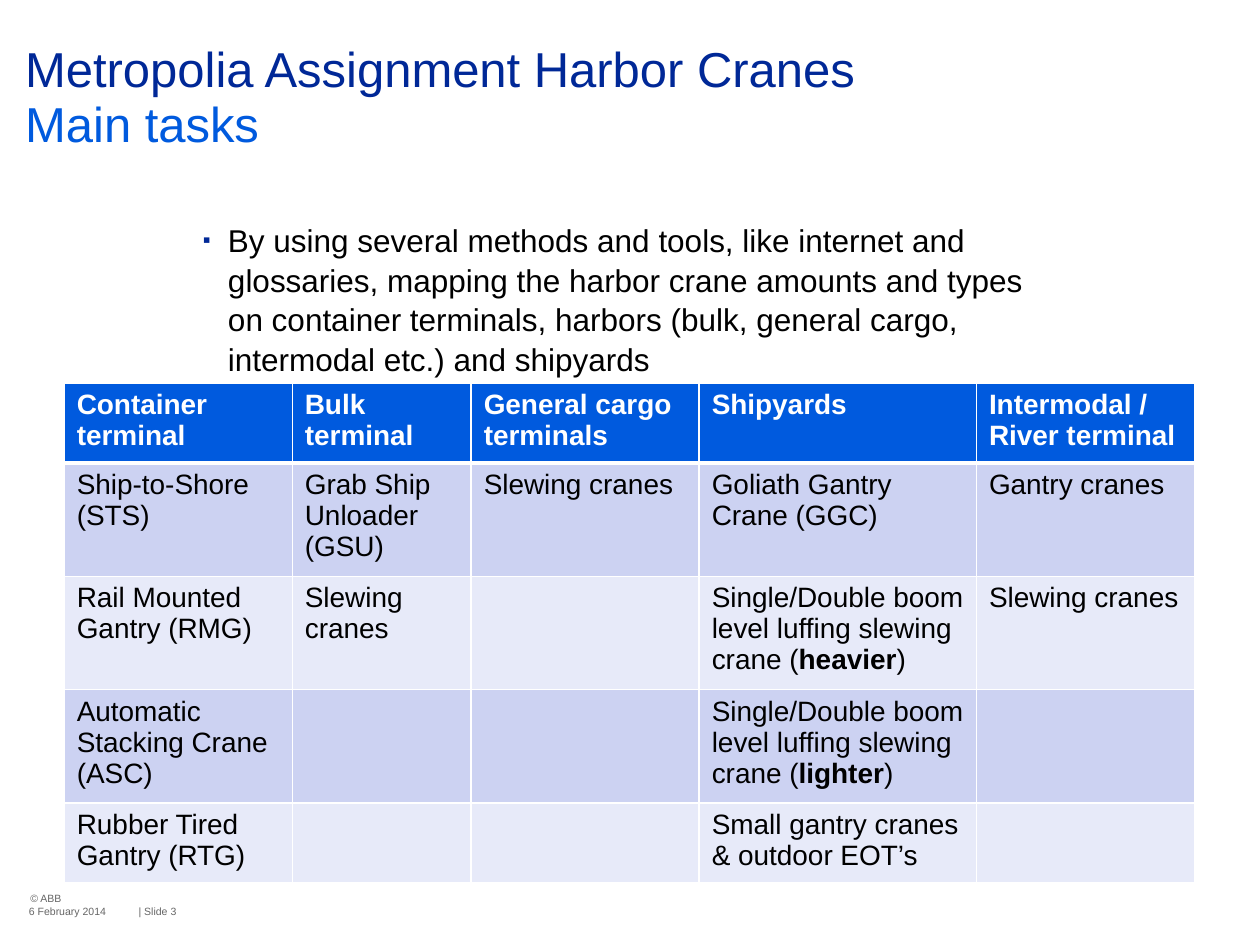
"""Build the harbor crane main tasks slide."""
from dataclasses import dataclass

import pptx
import pptx.dml.color
import pptx.enum.text
import pptx.oxml
import pptx.oxml.ns
import pptx.util
from pptx.dml.color import RGBColor
from pptx.util import Inches, Pt

NAVY = RGBColor(0x00, 0x28, 0x97)
BLUE = RGBColor(0x00, 0x5A, 0xDE)
BLACK = RGBColor(0x00, 0x00, 0x00)
WHITE = RGBColor(0xFF, 0xFF, 0xFF)
GRAY = RGBColor(0x66, 0x66, 0x66)
DARK_BAND = RGBColor(0xCC, 0xD2, 0xF2)
LIGHT_BAND = RGBColor(0xE7, 0xEA, 0xF9)

COLUMN_WIDTHS = (1.81, 1.42, 1.81, 2.2, 1.73)
ROW_HEIGHTS = (0.59, 0.84, 0.84, 0.84, 0.59)
CRANES = (
    ("Container terminal", "Bulk terminal", "General cargo terminals",
     "Shipyards", "Intermodal / River terminal"),
    ("Ship-to-Shore (STS)", "Grab Ship Unloader (GSU)", "Slewing cranes",
     "Goliath Gantry Crane (GGC)", "Gantry cranes"),
    ("Rail Mounted Gantry (RMG)", "Slewing cranes", "",
     "Single/Double boom level luffing slewing crane (*heavier*)", "Slewing cranes"),
    ("Automatic Stacking Crane (ASC)", "", "",
     "Single/Double boom level luffing slewing crane (*lighter*)", ""),
    ("Rubber Tired Gantry (RTG)", "", "", "Small gantry cranes & outdoor EOT’s", ""),
)


@dataclass(frozen=True)
class Span:
    text: str
    size: float
    color: RGBColor
    bold: bool = False


@dataclass(frozen=True)
class TextArea:
    left: float
    top: float
    width: float
    height: float
    lines: tuple[Span, ...]
    margins: tuple[float, float, float, float] = (0, 0, 0, 0)
    wrap: bool = True
    line_spacing: float = 1.0
    bullet: bool = False


AREAS = (
    TextArea(0, 0, 10, 1.74,
             (Span("Metropolia Assignment Harbor Cranes", 28, NAVY),
              Span("Main tasks", 28, BLUE)),
             margins=(0.2, 0.34, 0.24, 0), line_spacing=0.94),
    TextArea(1.61, 1.74, 6.77, 1.3,
             (Span("By using several methods and tools, like internet and glossaries, "
                   "mapping the harbor crane amounts and types on container terminals, "
                   "harbors (bulk, general cargo, intermodal etc.) and shipyards", 18, BLACK),),
             line_spacing=1.05, bullet=True),
    TextArea(0.24, 7.08, 1.22, 0.1, (Span("© ABB", 6, GRAY),), wrap=False),
    TextArea(0.23, 7.18, 0.87, 0.11, (Span("6 February 2014", 6, GRAY),), wrap=False),
    TextArea(1.1, 7.18, 0.51, 0.11, (Span("| Slide 3", 6, GRAY),)),
)


def apply_format(target: object, values: dict) -> None:
    """Set every attribute named in values on the target."""
    for name, value in values.items():
        setattr(target, name, value)


def add_span(para, span: Span) -> None:
    """Append one formatted run to a paragraph."""
    run = para.add_run()
    run.text = span.text
    apply_format(run.font, {"name": "Arial", "size": Pt(span.size), "bold": span.bold})
    run.font.color.rgb = span.color


def add_bullet(para) -> None:
    """Give a paragraph a hanging square bullet."""
    properties = para._p.get_or_add_pPr()
    properties.set("marL", str(Inches(0.2)))
    properties.set("indent", str(Inches(-0.2)))
    namespace = pptx.oxml.ns.nsdecls("a")
    for markup in (
        f'<a:buClr {namespace}><a:srgbClr val="{NAVY}"/></a:buClr>',
        f'<a:buSzPct {namespace} val="70000"/>',
        f'<a:buFont {namespace} typeface="Arial"/>',
        f'<a:buChar {namespace} char="▪"/>',
    ):
        properties.append(pptx.oxml.parse_xml(markup))


def add_text_area(page, area: TextArea) -> None:
    """Place a text box whose spans are separated by line breaks."""
    box = page.shapes.add_textbox(*map(Inches, (area.left, area.top, area.width, area.height)))
    left, top, right, bottom = map(Inches, area.margins)
    apply_format(box.text_frame, {
        "margin_left": left, "margin_top": top, "margin_right": right,
        "margin_bottom": bottom, "word_wrap": area.wrap,
        "vertical_anchor": pptx.enum.text.MSO_ANCHOR.TOP,
    })
    para = box.text_frame.paragraphs[0]
    if area.bullet:
        add_bullet(para)
    para.line_spacing = area.line_spacing
    for index, span in enumerate(area.lines):
        if index:
            para.add_line_break()
        add_span(para, span)


def add_borders(cell, bottom_width: float) -> None:
    """Draw white lines on all four sides of a cell."""
    properties = cell._tc.get_or_add_tcPr()
    for side, width in (("L", 1), ("R", 1), ("T", 1), ("B", bottom_width)):
        properties.append(pptx.oxml.parse_xml(
            f'<a:ln{side} {pptx.oxml.ns.nsdecls("a")} w="{Pt(width)}">'
            f'<a:solidFill><a:srgbClr val="{WHITE}"/></a:solidFill></a:ln{side}>'))


def fill_cell(cell, text: str, row: int) -> None:
    """Style a cell for its row and write text, bold between asterisks."""
    header = row == 0
    add_borders(cell, 3 if header else 1)
    cell.fill.solid()
    cell.fill.fore_color.rgb = BLUE if header else (LIGHT_BAND, DARK_BAND)[row % 2]
    para = cell.text_frame.paragraphs[0]
    if not text:
        para.font.size = Pt(16)
        return
    for index, part in enumerate(text.split("*")):
        add_span(para, Span(part, 16, WHITE if header else BLACK, header or index % 2 == 1))


def add_crane_table(page) -> None:
    """Add the table of crane types by terminal."""
    table = page.shapes.add_table(
        len(CRANES), len(COLUMN_WIDTHS), Inches(0.51), Inches(3.04),
        Inches(sum(COLUMN_WIDTHS)), Inches(sum(ROW_HEIGHTS))).table
    table.horz_banding = False
    for column, width in zip(table.columns, COLUMN_WIDTHS):
        column.width = Inches(width)
    for row, height in zip(table.rows, ROW_HEIGHTS):
        row.height = Inches(height)
    for row_index, texts in enumerate(CRANES):
        for column_index, text in enumerate(texts):
            fill_cell(table.cell(row_index, column_index), text, row_index)


def main() -> None:
    """Assemble and save the deck."""
    deck = pptx.Presentation()
    apply_format(deck, {"slide_width": Inches(10), "slide_height": Inches(7.5)})
    page = deck.slides.add_slide(deck.slide_layouts[6])
    for area in AREAS:
        add_text_area(page, area)
    add_crane_table(page)
    deck.save("out.pptx")


if __name__ == "__main__":
    main()
